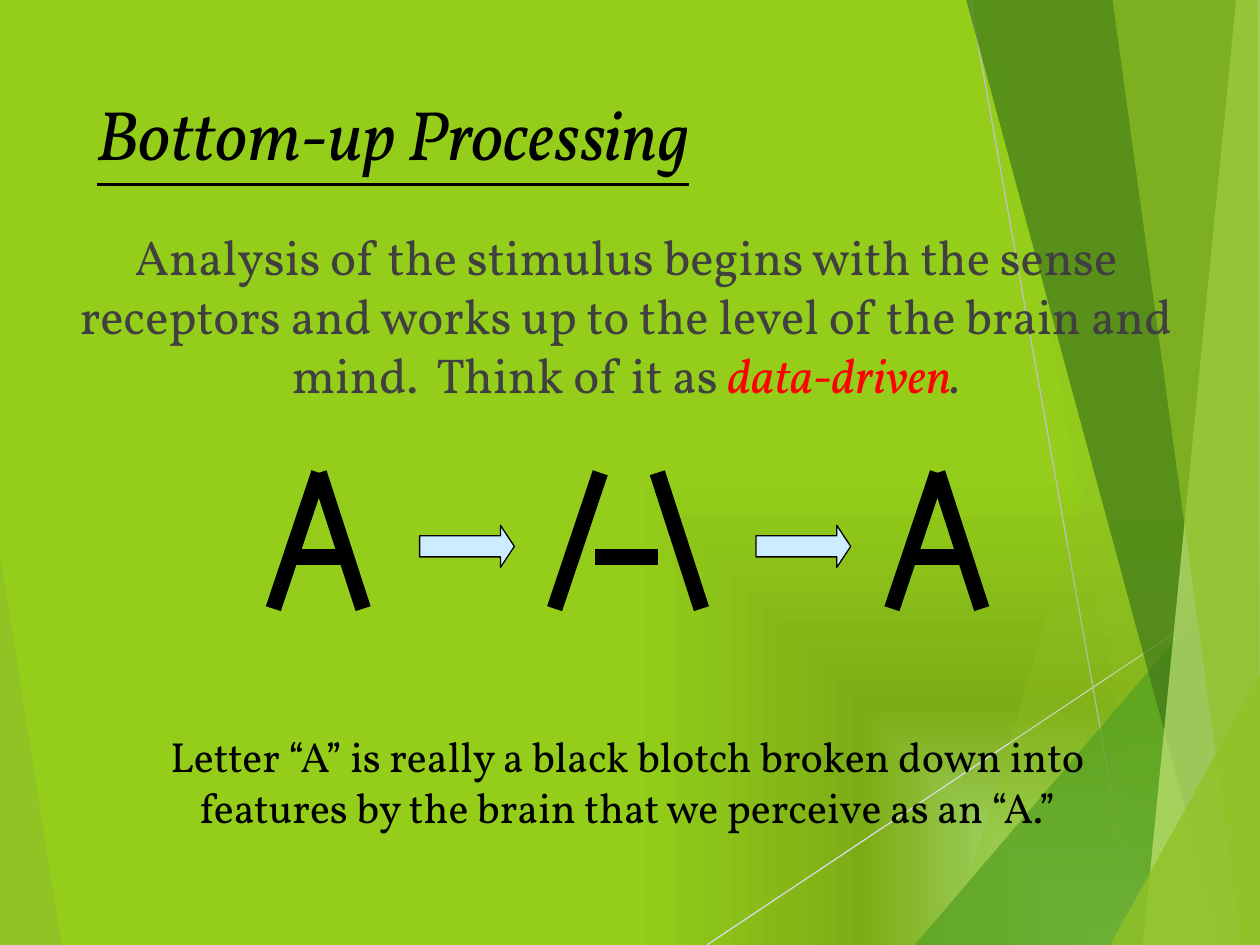
from lxml.etree import SubElement
from pptx import Presentation
from pptx.dml.color import RGBColor
from pptx.enum.shapes import MSO_CONNECTOR, MSO_SHAPE
from pptx.enum.text import MSO_ANCHOR, PP_ALIGN
from pptx.oxml import parse_xml
from pptx.oxml.ns import nsdecls, qn
from pptx.util import Cm, Pt

FONT = "Vollkorn"
WIDTH, HEIGHT = 25.4, 19.05
BLACK = RGBColor(0x00, 0x00, 0x00)
DARK_GREY = RGBColor(0x40, 0x40, 0x40)
MID_GREY = RGBColor(0xBF, 0xBF, 0xBF)
LIGHT_GREY = RGBColor(0xD9, 0xD9, 0xD9)
RED = RGBColor(0xFF, 0x00, 0x00)
PALE_BLUE = RGBColor(0xCC, 0xEC, 0xFF)
LIME = RGBColor(0x90, 0xC2, 0x26)
GREEN = RGBColor(0x54, 0xA0, 0x21)
DARK_GREEN = RGBColor(0x3F, 0x78, 0x19)
PALE_LIME = RGBColor(0xC0, 0xE4, 0x74)
BACKGROUND_STOPS = (
    (0, RGBColor(0xB7, 0xE9, 0x96)),
    (50, RGBColor(0x7D, 0xAD, 0x16)),
    (100, RGBColor(0x94, 0xCE, 0x1A)),
)

LEFT_FACET = ([(0, 11.15), (1.24, HEIGHT), (0, HEIGHT)], LIME, 85)
RIGHT_FACETS = (
    ([(24.77, 0), (19.15, HEIGHT), (WIDTH, HEIGHT), (WIDTH, 0)], LIME, 30),
    ([(20.02, 0), (23.34, HEIGHT), (WIDTH, HEIGHT), (WIDTH, 0)], LIME, 20),
    ([(18.44, HEIGHT), (WIDTH, 10.9), (WIDTH, HEIGHT)], GREEN, 72),
    ([(19.48, 0), (24.64, HEIGHT), (WIDTH, HEIGHT), (WIDTH, 0)], DARK_GREEN, 70),
    ([(24.92, 0), (23.04, HEIGHT), (WIDTH, HEIGHT), (WIDTH, 0)], PALE_LIME, 70),
    ([(22.43, 0), (25.04, HEIGHT), (WIDTH, HEIGHT), (25.35, 0)], LIME, 65),
    ([(22.38, HEIGHT), (WIDTH, 13.59), (WIDTH, HEIGHT)], LIME, 80),
)


def set_background(page):
    """Fill the page with a gradient that spreads from the bottom right corner."""
    stops = "".join(
        f'<a:gs pos="{place * 1000}"><a:srgbClr val="{color}"/></a:gs>'
        for place, color in BACKGROUND_STOPS
    )
    background = parse_xml(
        f'<p:bg {nsdecls("p", "a")}><p:bgPr><a:gradFill rotWithShape="1">'
        f'<a:gsLst>{stops}</a:gsLst><a:path path="rect">'
        '<a:fillToRect l="100000" t="100000"/></a:path></a:gradFill>'
        "<a:effectLst/></p:bgPr></p:bg>"
    )
    page.element.cSld.insert(0, background)


def add_facet(page, points, color, opacity):
    """Draw a see-through polygon."""
    corners = [(Cm(x), Cm(y)) for x, y in points]
    builder = page.shapes.build_freeform(*corners[0])
    builder.add_line_segments(corners[1:])
    facet = builder.convert_to_shape()
    facet.shadow.inherit = False
    facet.line.fill.background()
    facet.fill.solid()
    facet.fill.fore_color.rgb = color
    color_element = facet.element.spPr.find(qn("a:solidFill"))[0]
    SubElement(color_element, qn("a:alpha"), val=str(opacity * 1000))


def add_line(parent, start, end, color, weight):
    """Draw a straight line on a page or in a group."""
    line = parent.shapes.add_connector(
        MSO_CONNECTOR.STRAIGHT, *(Cm(length) for length in (*start, *end))
    )
    line.line.color.rgb = color
    line.line.width = Pt(weight)
    SubElement(line.element.spPr, qn("a:effectLst"))


def add_letter(page, left, gap=0, bar_offset=0.28):
    """Draw an A from three strokes, with a gap between the slanted ones."""
    top, bar, bottom = 9.53, 11.23, 12.27
    apex = left + 0.92
    group = page.shapes.add_group_shape()
    strokes = (
        ((apex, top), (left, bottom)),
        ((apex + gap + 0.89, bottom), (apex + gap, top)),
        ((left + bar_offset, bar), (left + bar_offset + 1.27, bar)),
    )
    for start, end in strokes:
        add_line(group, start, end, BLACK, 9)


def add_arrow(page, left):
    """Draw a block arrow between two letters."""
    arrow = page.shapes.add_shape(
        MSO_SHAPE.RIGHT_ARROW, Cm(left), Cm(10.59), Cm(1.91), Cm(0.85)
    )
    arrow.adjustments[0] = 0.5
    arrow.adjustments[1] = 0.33
    arrow.shadow.inherit = False
    arrow.fill.solid()
    arrow.fill.fore_color.rgb = PALE_BLUE
    arrow.line.color.rgb = BLACK
    arrow.line.width = Pt(0.75)


def add_span(para, text, size, color=BLACK, italic=False, underline=False):
    """Add a run of formatted text to a paragraph."""
    span = para.add_run()
    span.text = text
    span.font.name = FONT
    span.font.size = Pt(size)
    span.font.color.rgb = color
    span.font.italic = italic
    span.font.underline = underline


def add_text(page, place, spans, size, align=PP_ALIGN.CENTER, before=0):
    """Add a text box with one paragraph of (text, format) spans."""
    box = page.shapes.add_textbox(*(Cm(length) for length in place))
    box.text_frame.word_wrap = True
    box.text_frame.vertical_anchor = MSO_ANCHOR.TOP
    para = box.text_frame.paragraphs[0]
    para.alignment = align
    para.space_before = Pt(before)
    for text, style in spans:
        add_span(para, text, size, **style)


def main():
    """Build the slide and save it."""
    deck = Presentation()
    deck.slide_width, deck.slide_height = Cm(WIDTH), Cm(HEIGHT)
    page = deck.slides.add_slide(deck.slide_layouts[6])
    set_background(page)

    add_facet(page, *LEFT_FACET)
    add_line(page, (14.25, HEIGHT), (WIDTH, 11.61), LIGHT_GREY, 0.75)
    add_line(page, (19.56, 0), (22.96, HEIGHT), MID_GREY, 0.75)
    for facet in RIGHT_FACETS:
        add_facet(page, *facet)

    title = [("Bottom-up Processing", {"italic": True, "underline": True})]
    add_text(page, (1.7, 1.7, 17.63, 3.66), title, 40, align=PP_ALIGN.LEFT)
    definition = [
        (
            "Analysis of the stimulus begins with the sense receptors and works up "
            "to the level of the brain and mind.  Think of it as ",
            {"color": DARK_GREY},
        ),
        ("data-driven", {"color": RED, "italic": True}),
        (".", {"color": DARK_GREY, "italic": True}),
    ]
    add_text(page, (1.19, 4.45, 22.86, 4.9), definition, 28, before=10)
    example = [
        (
            "Letter “A” is really a black blotch broken down into features "
            "by the brain that we perceive as an “A.”",
            {},
        )
    ]
    add_text(page, (1.85, 14.61, 21.59, 3.18), example, 24, before=4.8)

    add_letter(page, 5.51)
    add_arrow(page, 8.46)
    add_letter(page, 11.18, gap=1.15, bar_offset=0.81)
    add_arrow(page, 15.24)
    add_letter(page, 17.98)

    deck.save("out.pptx")


if __name__ == "__main__":
    main()
